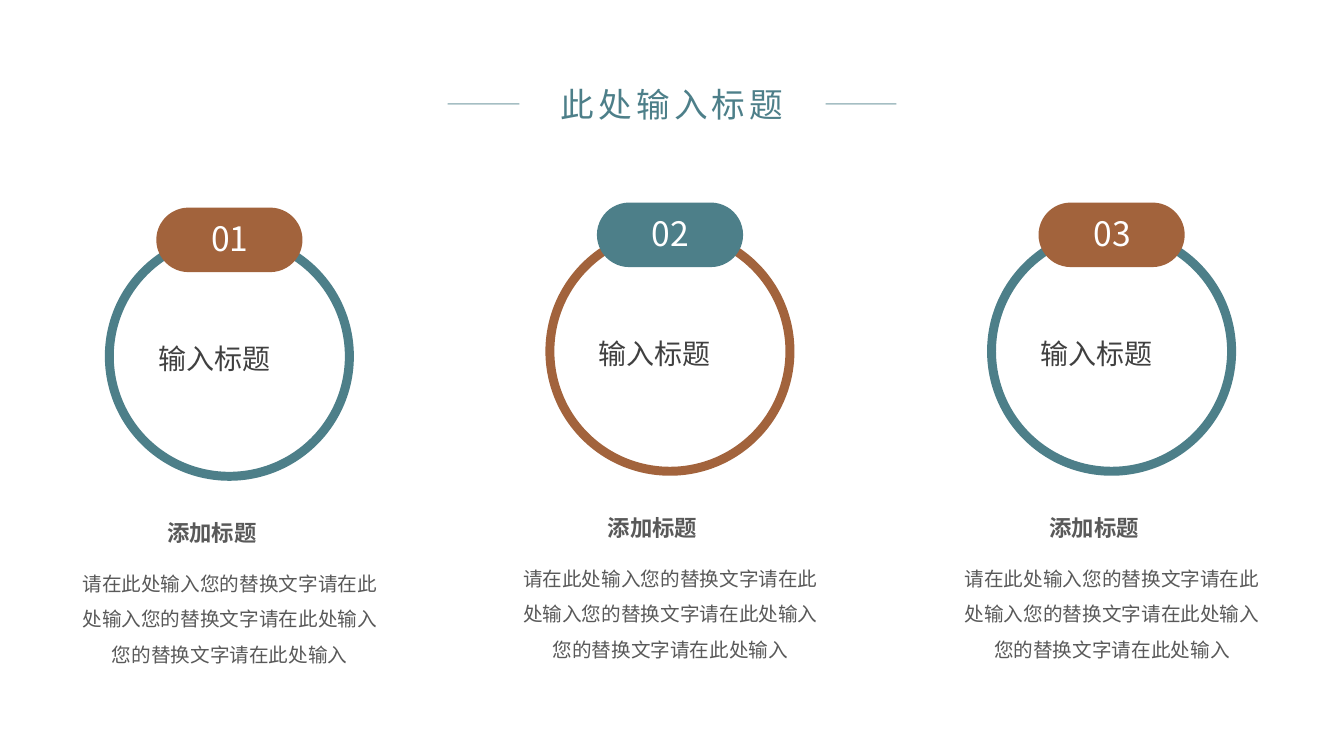
from lxml import etree
from pptx import Presentation
from pptx import util as u
from pptx.dml.color import RGBColor
from pptx.enum import shapes, text
from pptx.oxml.ns import qn

FONT = "Noto Sans CJK SC"
COLORS = {
    "teal": "4D7F89",
    "rust": "A2633C",
    "body": "595959",
    "dark": "404040",
    "white": "FFFFFF",
}
BODY = "请在此处输入您的替换文字" * 3 + "请在此处输入"
# number, left, top, ring colour, badge colour
COLUMNS = [
    ("01", 1.04, 2.3, "teal", "rust"),
    ("02", 5.41, 2.25, "rust", "teal"),
    ("03", 9.79, 2.25, "teal", "rust"),
]


def rgb(name):
    return RGBColor.from_string(COLORS[name])


def inches(*values):
    return [u.Inches(v) for v in values]


def add_text(parent, content, box, size, color="body", bold=False,
             align=text.PP_ALIGN.CENTER, wrap=True, line_spacing=None,
             tracking=None, gradient=None):
    """Add a text box; gradient is a pair of colour names, tracking is in points."""
    tf = parent.add_textbox(*inches(*box)).text_frame
    tf.word_wrap = wrap
    tf.auto_size = text.MSO_AUTO_SIZE.SHAPE_TO_FIT_TEXT
    p = tf.paragraphs[0]
    p.alignment = align
    if line_spacing:
        p.line_spacing = line_spacing
    r = p.add_run()
    r.text = content
    font = r.font
    font.size = u.Pt(size)
    font.bold = bold
    font.name = FONT
    if gradient:
        font.fill.gradient()
        font.fill.gradient_angle = 0
        for stop, name in zip(font.fill.gradient_stops, gradient):
            stop.color.rgb = rgb(name)
    else:
        font.color.rgb = rgb(color)
    rpr = r._r.get_or_add_rPr()
    etree.SubElement(rpr, qn("a:ea"), typeface=FONT)
    if tracking:
        rpr.set("spc", str(tracking * 100))


def add_solid(parent, kind, box, color, adjustment):
    sp = parent.add_shape(kind, *inches(*box))
    sp.adjustments[0] = adjustment
    sp.shadow.inherit = False
    sp.fill.solid()
    sp.fill.fore_color.rgb = rgb(color)
    sp.line.fill.background()


def add_rule(parent, left, right, y):
    """Add a half-transparent horizontal line."""
    line = parent.add_connector(shapes.MSO_CONNECTOR.STRAIGHT,
                                *inches(left, y, right, y))
    line.line.width = u.Pt(1)
    line.line.color.rgb = rgb("teal")
    sp_pr = line._element.spPr
    etree.SubElement(sp_pr.find(".//" + qn("a:srgbClr")), qn("a:alpha"), val="50000")
    etree.SubElement(sp_pr, qn("a:effectLst"))


def add_column(parent, number, left, top, ring, badge):
    justify = text.PP_ALIGN.JUSTIFY
    add_solid(parent, shapes.MSO_SHAPE.DONUT, (left, top, 2.47, 2.47), ring, 0.036)
    add_solid(parent, shapes.MSO_SHAPE.ROUNDED_RECTANGLE,
              (left + 0.51, top - 0.24, 1.45, 0.64), badge, 0.5)
    add_text(parent, "添加标题", (left + 0.52, top + 2.8, 1.45, 0.37), 16,
             bold=True, align=justify)
    add_text(parent, BODY, (left - 0.38, top + 3.21, 3.24, 1.12), 14,
             line_spacing=1.5)
    add_text(parent, number, (left + 0.95, top - 0.19, 0.58, 0.5), 24,
             color="white", wrap=False)
    add_text(parent, "输入标题", (left + 0.43, top + 1.04, 1.64, 0.44), 20,
             color="dark", align=justify)


def add_heading(parent):
    group = parent.add_group_shape().shapes
    for left, right in ((4.44, 5.15), (8.19, 8.89)):
        add_rule(group, left, right, 1.03)
    add_text(group, "此处输入标题", (5.19, 0.78, 2.95, 0.5), 24,
             tracking=3, gradient=("teal", "rust"))


def main():
    prs = Presentation()
    prs.slide_width, prs.slide_height = inches(13.33, 7.5)
    s = prs.slides.add_slide(prs.slide_layouts[6])
    for column in COLUMNS:
        add_column(s.shapes, *column)
    add_heading(s.shapes)
    prs.save("out.pptx")


if __name__ == "__main__":
    main()
